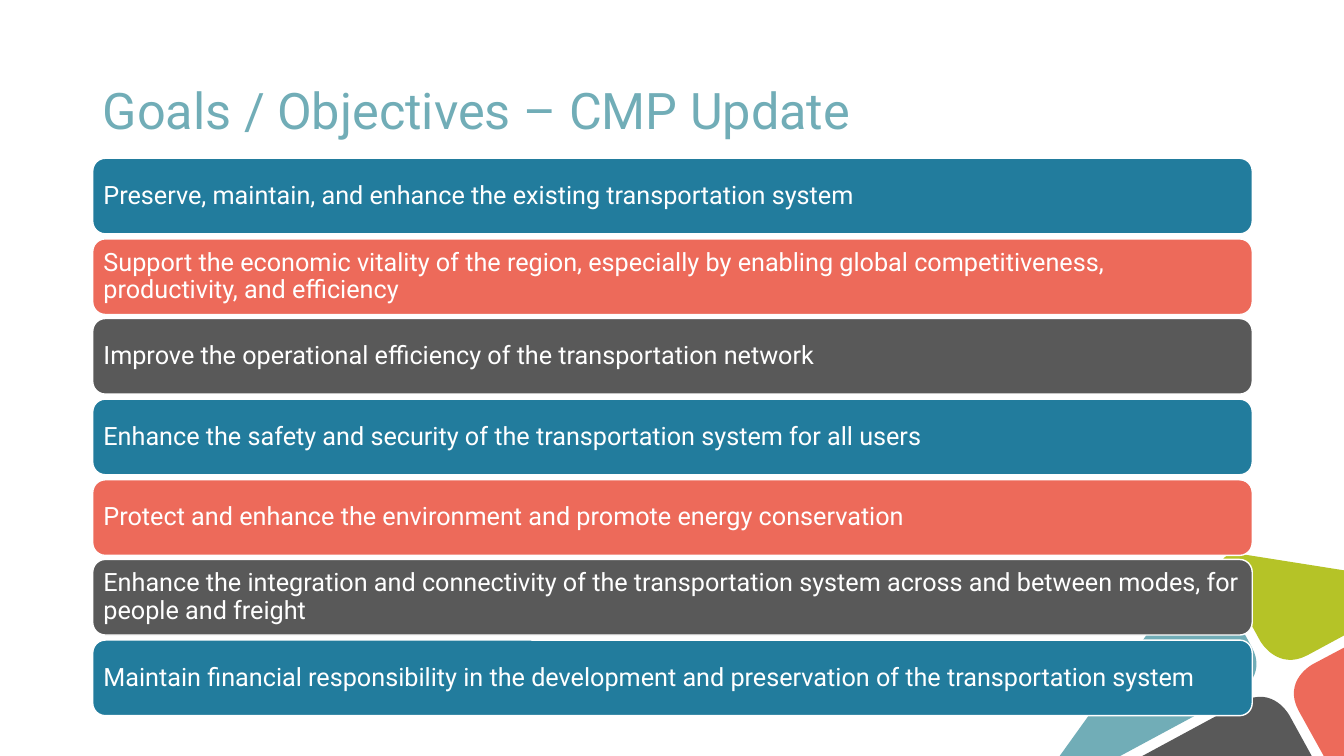
from pptx import Presentation
from pptx import util as u
from pptx.dml.color import RGBColor
from pptx.enum import shapes, text

PX = 9144
FONT = "Roboto"
WHITE, TEAL, BLUE, CORAL, GRAY, LIME = "FFFFFF", "71ADB7", "227C9D", "ED6A5A", "595959", "B5C327"

GOALS = [
    "Preserve, maintain, and enhance the existing transportation system",
    "Support the economic vitality of the region, especially by enabling global "
    "competitiveness, productivity, and efficiency",
    "Improve the operational efficiency of the transportation network",
    "Enhance the safety and security of the transportation system for all users",
    "Protect and enhance the environment and promote energy conservation",
    "Enhance the integration and connectivity of the transportation system across "
    "and between modes, for people and freight",
    "Maintain financial responsibility in the development and preservation of the "
    "transportation system",
]
BAR_COLORS = [BLUE, CORAL, GRAY]
BAR_LEFT, BAR_TOP, BAR_WIDTH, BAR_HEIGHT = 92, 157, 1150, 75
LAST_BAR_TOP = 635


def px(value):
    return u.Emu(round(value * PX))


def color(value):
    return RGBColor.from_string(value)


def rounded(start, control, end, steps=16):
    points = []
    for step in range(steps + 1):
        t = step / steps
        weights = ((1 - t) ** 3 + 3 * t * (1 - t) ** 2, 3 * t * t * (1 - t), t ** 3)
        points.append(tuple(
            sum(weight * point[axis] for weight, point in zip(weights, (start, control, end)))
            for axis in (0, 1)))
    return points


PETALS = [
    (CORAL, [(1334, 642), *rounded((1302, 659), (1272, 675), (1288, 705)),
             (1313, 750), (1334, 750)]),
    (LIME, [*rounded((1250, 636), (1267, 666), (1297, 650)), (1334, 630), (1334, 566),
            *rounded((1233, 550), (1200, 544), (1216, 574))]),
    (GRAY, [(1133, 750), (1301, 750), *rounded((1279, 710), (1263, 680), (1233, 696))]),
    (TEAL, [*rounded((1209, 582), (1193, 552), (1173, 580)), (1051, 750), (1111, 750),
            *rounded((1228, 687), (1258, 671), (1241, 641))]),
]


def format_text(text_frame, size, font_color):
    text_frame.word_wrap = True
    text_frame.vertical_anchor = text.MSO_ANCHOR.MIDDLE
    paragraph = text_frame.paragraphs[0]
    paragraph.alignment = text.PP_ALIGN.LEFT
    paragraph.line_spacing = 0.9
    font = paragraph.runs[0].font
    font.name, font.size = FONT, u.Pt(size)
    font.color.rgb = color(font_color)


def set_title(slide, wording):
    title = slide.shapes.title
    title.left, title.top, title.width, title.height = px(92), px(40), px(1150), px(145)
    title.text_frame.text = wording
    format_text(title.text_frame, 36, TEAL)


def add_petal(slide, fill, points):
    corners = [(px(x), px(y)) for x, y in points]
    builder = slide.shapes.build_freeform(*corners[0])
    builder.add_line_segments(corners[1:], close=True)
    shape = builder.convert_to_shape()
    shape.shadow.inherit = False
    shape.fill.solid()
    shape.fill.fore_color.rgb = color(fill)
    shape.line.fill.background()


def add_goal_bar(slide, top, fill, wording):
    shape = slide.shapes.add_shape(
        shapes.MSO_SHAPE.ROUNDED_RECTANGLE,
        px(BAR_LEFT), px(top), px(BAR_WIDTH), px(BAR_HEIGHT))
    shape.shadow.inherit = False
    shape.fill.solid()
    shape.fill.fore_color.rgb = color(fill)
    shape.line.color.rgb = color(WHITE)
    shape.line.width = u.Pt(1)
    text_frame = shape.text_frame
    text_frame.margin_left = text_frame.margin_right = px(7)
    text_frame.margin_top = text_frame.margin_bottom = px(7)
    text_frame.text = wording
    format_text(text_frame, 18, WHITE)


def main():
    presentation = Presentation()
    presentation.slide_width, presentation.slide_height = u.Inches(13.33), u.Inches(7.5)
    slide = presentation.slides.add_slide(presentation.slide_layouts[5])
    set_title(slide, "Goals / Objectives – CMP Update")
    for fill, points in PETALS:
        add_petal(slide, fill, points)
    pitch = (LAST_BAR_TOP - BAR_TOP) / (len(GOALS) - 1)
    for index, goal in enumerate(GOALS):
        fill = BAR_COLORS[index % len(BAR_COLORS)]
        add_goal_bar(slide, round(BAR_TOP + index * pitch), fill, goal)
    presentation.save("out.pptx")


if __name__ == "__main__":
    main()
